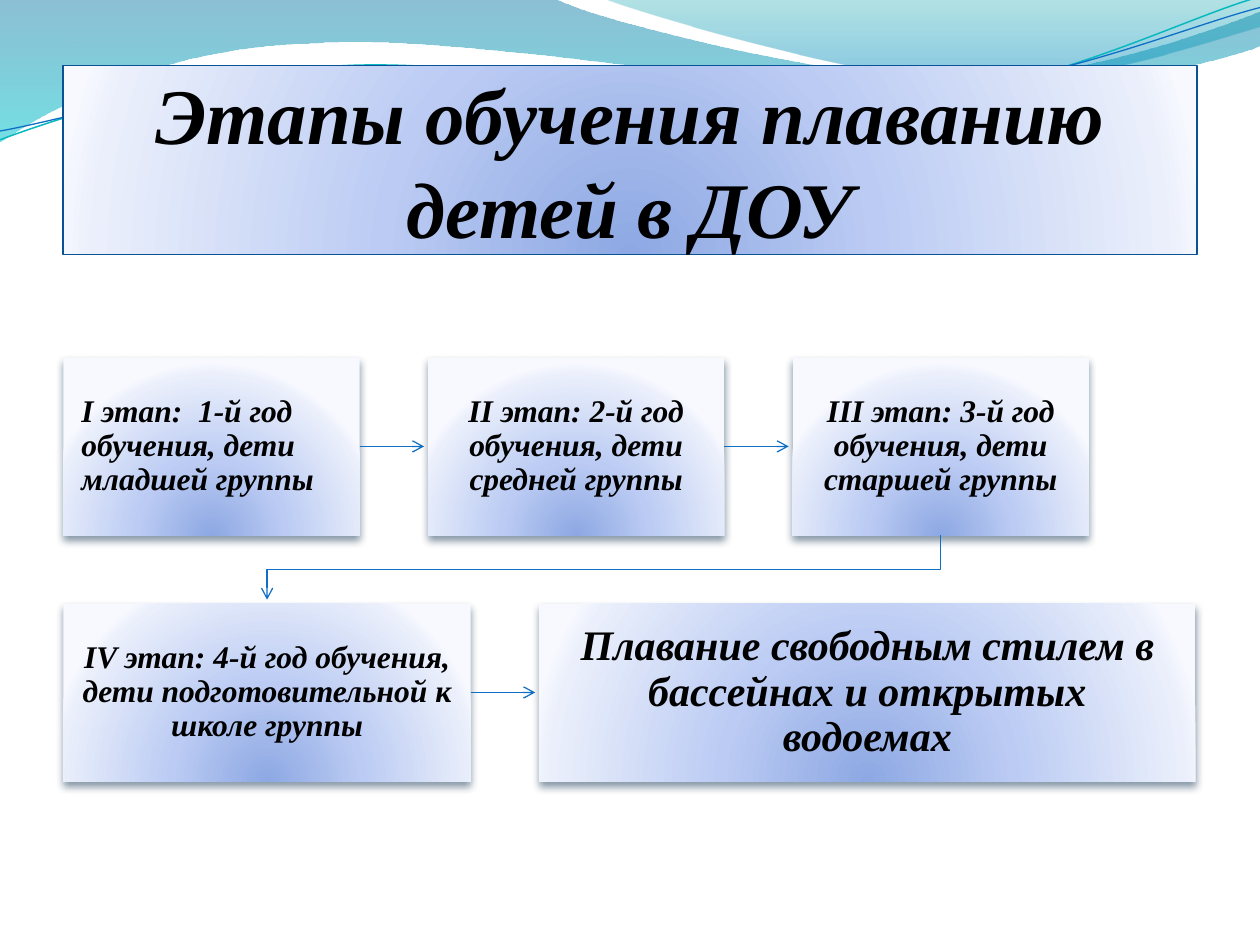
from lxml import etree
from pptx import Presentation
from pptx.dml.color import RGBColor
from pptx.enum.shapes import MSO_SHAPE
from pptx.enum.text import MSO_ANCHOR, MSO_AUTO_SIZE, PP_ALIGN
from pptx.oxml.ns import qn
from pptx.util import Cm, Pt

LEFT, CENTER = PP_ALIGN.LEFT, PP_ALIGN.CENTER
MIDDLE, BOTTOM = MSO_ANCHOR.MIDDLE, MSO_ANCHOR.BOTTOM
NO_FIT = MSO_AUTO_SIZE.NONE
RECT = MSO_SHAPE.RECTANGLE

FONT = "Times New Roman"
BLUE = "0F6FC6"
GLOW = [(0, "8DA8E3", 100), (43, "BBCBF3", 100),
        (93, "EAEFFB", 100), (100, "F7F9FF", 100)]
GAP, ARROW = 1.38, 1.3

WAVES = [
    ((0, 0),
     [[(4.4, -0.01)],
      [(4.76, 0.17), (6.64, 0.63), (7.58, 0.63)],
      [(8.53, 0.63), (9.58, 0.26), (10, 0.09)],
      [(10.01, 0.36)],
      [(9.83, 0.44), (8.7, 0.76), (7.46, 0.75)],
      [(6.22, 0.75), (3.82, 0.28), (2.57, 0.34)],
      [(1.29, 0.36), (0.46, 0.83), (-0.01, 1.13)],
      [(0, 0)]],
     [(0, "0074A1", 45), (100, "00C6CF", 55)]),
    ((4.79, -0.01),
     [[(5.09, 0.11), (6.82, 0.62), (7.69, 0.65)],
      [(8.56, 0.69), (9.61, 0.32), (10, 0.21)],
      [(10, 0)],
      [(4.79, -0.01)]],
     [(0, "00A1A9", 30), (80, "008BBF", 45)]),
]
STRANDS = [
    ((0, 1.11),
     [[(0.48, 0.93), (1.58, 0.57), (2.77, 0.52)],
      [(3.95, 0.47), (5.93, 0.89), (7.13, 0.8)],
      [(8.33, 0.71), (9.38, 0.15), (9.98, -0.02)]],
     "0AB8BF", 0.85),
    ((0, 1.04),
     [[(0.47, 0.96), (1.64, 0.61), (2.83, 0.56)],
      [(4.03, 0.51), (5.97, 0.84), (7.17, 0.75)],
      [(8.36, 0.67), (9.41, 0.21), (10, 0.06)]],
     BLUE, 0.75),
]
TOP_ROW = [
    (5.97, "I этап:  1-й год обучения, дети младшей группы", {"align": LEFT}),
    (5.97, "II этап: 2-й год обучения, дети средней группы", {}),
    (5.97, "III этап: 3-й год обучения, дети старшей группы", {}),
]
BOTTOM_ROW = [
    (8.21, "IV этап: 4-й год обучения, дети подготовительной к школе группы", {}),
    (13.23, "Плавание свободным стилем в бассейнах и открытых водоемах",
     {"size": 24, "inset": 0.48}),
]


def rgb(value):
    return RGBColor.from_string(value)


def sub(parent, tag, **attrs):
    return etree.SubElement(parent, qn(tag), {k: str(v) for k, v in attrs.items()})


def add_color(parent, color, alpha):
    clr = sub(parent, "a:srgbClr", val=color)
    if alpha < 100:
        sub(clr, "a:alpha", val=alpha * 1000)


def set_gradient(shape, stops, radial=False):
    grad = etree.Element(qn("a:gradFill"), rotWithShape="1")
    gs_list = sub(grad, "a:gsLst")
    for pos, color, alpha in stops:
        add_color(sub(gs_list, "a:gs", pos=pos * 1000), color, alpha)
    if radial:
        center = sub(grad, "a:path", path="circle")
        sub(center, "a:fillToRect", l=50000, t=130000, r=50000, b=-30000)
    else:
        sub(grad, "a:lin", ang=5400000, scaled=1)
    shape.line._get_or_add_ln().addprevious(grad)


def set_line(shape, color, width=0.75, arrow=False):
    shape.line.color.rgb = rgb(color)
    shape.line.width = Pt(width)
    if arrow:
        sub(shape.line._get_or_add_ln(), "a:tailEnd", type="arrow")


def set_shadow(shape):
    effects = shape._element.spPr.find(qn("a:effectLst"))
    shadow = sub(effects, "a:outerShdw", blurRad=Pt(4.5), dist=Pt(3),
                 dir=5400000, algn="ctr", rotWithShape=0)
    add_color(shadow, "042747", 48)


def set_text(shape, text, size=18, align=CENTER, anchor=MIDDLE, inset=0.36,
             top=None, spacing=0.9):
    tf = shape.text_frame
    tf.word_wrap = True
    tf.auto_size = NO_FIT
    tf.vertical_anchor = anchor
    tf.margin_left = tf.margin_right = tf.margin_bottom = Cm(inset)
    tf.margin_top = Cm(inset if top is None else top)
    p = tf.paragraphs[0]
    p.alignment = align
    p.line_spacing = spacing
    r = p.add_run()
    r.text = text
    r.font.name = FONT
    r.font.size = Pt(size)
    r.font.bold = r.font.italic = True
    r.font.color.rgb = rgb("000000")


def add_path(s, x, y, unit, start, segments, close=False):
    points = [(Cm(x + px * unit), Cm(y + py * unit))
              for px, py in [start] + [pt for seg in segments for pt in seg]]
    builder = s.shapes.build_freeform(*points[0])
    builder.add_line_segments(points[1:], close=close)
    sp = builder.convert_to_shape()
    lines = iter(list(sp._element.iter(qn("a:lnTo"))))
    for seg in segments:
        first, *rest = [next(lines) for _ in seg]
        if rest:
            first.tag = qn("a:cubicBezTo")
            for line in rest:
                first.append(line[0])
                line.getparent().remove(line)
    sp.shadow.inherit = False
    if not close:
        sp.fill.background()
    return sp


def add_waves(s, x, y, w):
    unit = w / 10
    for start, segments, stops in WAVES:
        sp = add_path(s, x, y, unit, start, segments, close=True)
        sp.line.fill.background()
        set_gradient(sp, stops)
    for start, segments, color, width in STRANDS:
        set_line(add_path(s, x, y, unit, start, segments), color, width)


def add_title(s, x, y, w, h):
    sp = s.shapes.title
    s.shapes._spTree.append(sp._element)
    sp.left, sp.top, sp.width, sp.height = Cm(x), Cm(y), Cm(w), Cm(h)
    set_line(sp, "095295")
    set_gradient(sp, GLOW, radial=True)
    set_text(sp, "Этапы обучения плаванию детей в ДОУ", size=45, anchor=BOTTOM,
             inset=0, top=0.13, spacing=1.0)


def add_stage(s, x, y, w, h, text, **fmt):
    sp = s.shapes.add_shape(RECT, Cm(x), Cm(y), Cm(w), Cm(h))
    sp.shadow.inherit = False
    sp.line.fill.background()
    set_gradient(sp, GLOW, radial=True)
    set_shadow(sp)
    set_text(sp, text, **fmt)


def add_arrow(s, x, y, *route):
    sp = add_path(s, x, y, 1, (0, 0), [[pt] for pt in route])
    set_line(sp, BLUE, arrow=True)


def add_row(s, x, y, h, stages):
    for i, (w, text, fmt) in enumerate(stages):
        if i:
            add_arrow(s, x - GAP, y + h / 2, (ARROW, 0))
        add_stage(s, x, y, w, h, text, **fmt)
        x += w + GAP


def add_flow(s, x, y, h):
    add_row(s, x, y, h, TOP_ROW)
    add_row(s, x, y + h + GAP, h, BOTTOM_ROW)
    start = sum(w + GAP for w, _, _ in TOP_ROW[:2]) + TOP_ROW[2][0] / 2
    shift = BOTTOM_ROW[0][0] / 2 - start
    add_arrow(s, x + start, y + h, (0, GAP / 2), (shift, GAP / 2), (shift, ARROW))


def main():
    prs = Presentation()
    prs.slide_width, prs.slide_height = Cm(25.4), Cm(19.05)
    s = prs.slides.add_slide(prs.slide_layouts[5])
    add_waves(s, 0, 0, 25.4)
    add_title(s, 1.27, 1.32, 22.86, 3.81)
    add_flow(s, 1.28, 7.21, 3.58)
    prs.save("out.pptx")


if __name__ == "__main__":
    main()
